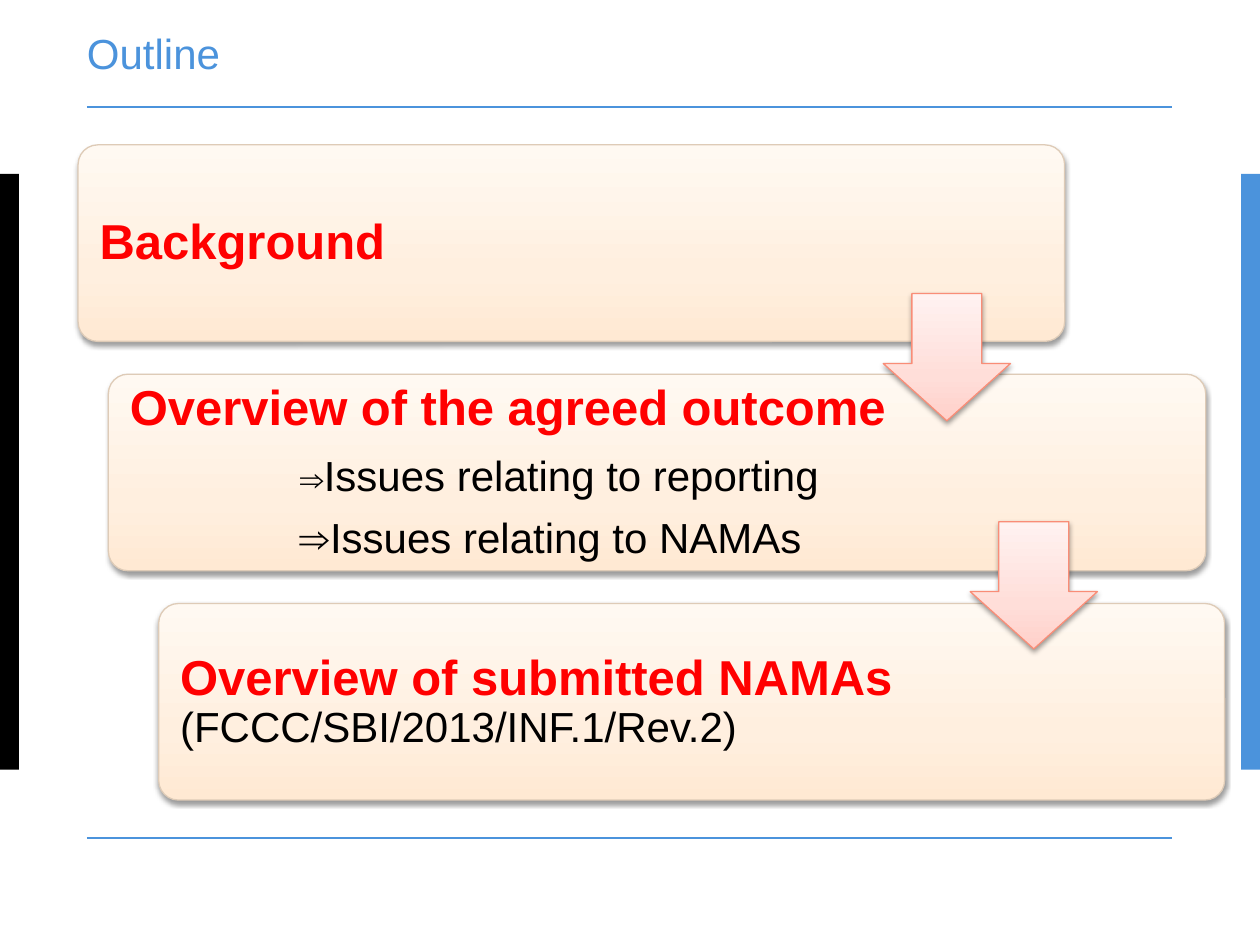
from pptx import Presentation
from pptx.dml.color import RGBColor
from pptx.enum.shapes import MSO_CONNECTOR, MSO_SHAPE
from pptx.enum.text import MSO_ANCHOR
from pptx.oxml import parse_xml
from pptx.oxml.ns import nsdecls
from pptx.util import Inches, Pt

BLACK = RGBColor(0x00, 0x00, 0x00)
BLUE = RGBColor(0x4B, 0x93, 0xDC)
RED = RGBColor(0xFF, 0x00, 0x00)
CARD_LINE = RGBColor(0xDE, 0xCB, 0xB7)
ARROW_LINE = RGBColor(0xF9, 0x8D, 0x77)
CARD_GRADIENT = [RGBColor(0xFF, 0xE9, 0xD3), RGBColor(0xFF, 0xEF, 0xDF), RGBColor(0xFF, 0xF9, 0xF2)]
ARROW_GRADIENT = [RGBColor(0xFF, 0xD0, 0xCA), RGBColor(0xFF, 0xDE, 0xD9), RGBColor(0xFF, 0xF2, 0xF1)]

TITLE = {"name": "Arial", "size": Pt(24), "color": BLUE}
HEADING = {"name": "Arial", "size": Pt(28), "color": RED, "bold": True}
BODY = {"name": "Arial", "size": Pt(24), "color": BLACK, "bold": False}
SMALL_SIGN = {**BODY, "size": Pt(19)}

CARD_TOP, CARD_PITCH, CARD_HEIGHT = 1.15, 1.82, 1.56
TEXT_OFFSET, TEXT_HEIGHT, TEXT_INSET = 0.05, 1.47, 0.12
ISSUE_TAB = 1.35
ARROW_SIZE = 1.01

# Left, card width, text width, paragraphs as lists of (text, format) runs
CARDS = [
    (0.62, 7.83, 6.15, [[("Background", HEADING)]]),
    (0.86, 8.71, 6.72, [
        [("Overview of the agreed outcome", HEADING)],
        [("\t⇒", SMALL_SIGN), ("Issues relating to reporting", BODY)],
        [("\t⇒Issues relating to NAMAs", BODY)],
    ]),
    (1.26, 8.46, 6.53, [
        [("Overview of submitted NAMAs", HEADING), ("\n", BODY),
         ("(FCCC/SBI/2013/INF.1/Rev.2)", BODY)],
    ]),
]
ARROWS = [(7.01, 2.33), (7.7, 4.14)]


def set_font(font, style):
    for name, value in style.items():
        if name == "color":
            font.color.rgb = value
        else:
            setattr(font, name, value)


def add_side_bar(slide, left, color):
    bar = slide.shapes.add_shape(MSO_SHAPE.RECTANGLE, Inches(left), Inches(1.38), Inches(0.15), Inches(4.73))
    bar.shadow.inherit = False
    bar.fill.solid()
    bar.fill.fore_color.rgb = color
    bar.line.fill.background()


def add_rule(slide, y):
    rule = slide.shapes.add_connector(MSO_CONNECTOR.STRAIGHT, Inches(0.69), Inches(y), Inches(9.3), Inches(y))
    rule.line.color.rgb = BLUE
    rule.line.width = Pt(1)
    rule._element.spPr.append(parse_xml(f"<a:effectLst {nsdecls('a')}/>"))


def add_raised_shape(slide, kind, box, adjustments, gradient, line_color):
    """Add a shape with an upward three-stop gradient and a soft shadow below."""
    shape = slide.shapes.add_shape(kind, *map(Inches, box))
    for index, value in enumerate(adjustments):
        shape.adjustments[index] = value
    shape.line.color.rgb = line_color
    shape.line.width = Pt(0.75)

    shape.fill.background()
    properties = shape._element.spPr
    stops = "".join(
        f'<a:gs pos="{position * 1000}"><a:srgbClr val="{color}"/></a:gs>'
        for position, color in zip((0, 35, 100), gradient)
    )
    properties.replace(properties.find("{*}noFill"), parse_xml(
        f'<a:gradFill {nsdecls("a")} rotWithShape="1"><a:gsLst>{stops}</a:gsLst>'
        '<a:lin ang="16200000" scaled="0"/></a:gradFill>'))

    shape.shadow.inherit = False
    properties.find("{*}effectLst").append(parse_xml(
        f'<a:outerShdw {nsdecls("a")} blurRad="{Pt(3.1)}" dist="{Pt(1.6)}" dir="5400000" rotWithShape="0">'
        '<a:srgbClr val="000000"><a:alpha val="38000"/></a:srgbClr></a:outerShdw>'))


def add_text(slide, box, inset, paragraphs, spacing):
    text_frame = slide.shapes.add_textbox(*map(Inches, box)).text_frame
    text_frame.word_wrap = True
    text_frame.vertical_anchor = MSO_ANCHOR.MIDDLE
    for side in ("left", "top", "right", "bottom"):
        setattr(text_frame, f"margin_{side}", Inches(inset))
    for index, runs in enumerate(paragraphs):
        paragraph = text_frame.add_paragraph() if index else text_frame.paragraphs[0]
        if runs[0][0].startswith("\t"):
            paragraph._p.get_or_add_pPr().append(parse_xml(
                f'<a:tabLst {nsdecls("a")}><a:tab pos="{Inches(ISSUE_TAB)}" algn="l"/></a:tabLst>'))
        paragraph.line_spacing = spacing
        if spacing == 0.9:
            paragraph.space_after = Pt(11 if runs[0][1] is HEADING else 9.5)
        for text, style in runs:
            if text == "\n":
                paragraph.add_line_break()
                continue
            run = paragraph.add_run()
            run.text = text
            set_font(run.font, style)


def add_card(slide, index, left, width, text_width, paragraphs):
    top = CARD_TOP + index * CARD_PITCH
    add_raised_shape(slide, MSO_SHAPE.ROUNDED_RECTANGLE, (left, top, width, CARD_HEIGHT),
                     [0.1], CARD_GRADIENT, CARD_LINE)
    add_text(slide, (left + TEXT_OFFSET, top + TEXT_OFFSET, text_width, TEXT_HEIGHT),
             TEXT_INSET, paragraphs, 0.9)


def main():
    presentation = Presentation()
    presentation.slide_width = Inches(10)
    presentation.slide_height = Inches(7.5)
    slide = presentation.slides.add_slide(presentation.slide_layouts[6])

    add_side_bar(slide, 0, BLACK)
    add_side_bar(slide, 9.85, BLUE)
    for y in (0.85, 6.65):
        add_rule(slide, y)
    add_text(slide, (0.69, 0.34, 8.61, 0.34), 0, [[("Outline", TITLE)]], Pt(15))
    for index, card in enumerate(CARDS):
        add_card(slide, index, *card)
    for left, top in ARROWS:
        add_raised_shape(slide, MSO_SHAPE.DOWN_ARROW, (left, top, ARROW_SIZE, ARROW_SIZE),
                         [0.55, 0.45], ARROW_GRADIENT, ARROW_LINE)

    presentation.save("out.pptx")


if __name__ == "__main__":
    main()
